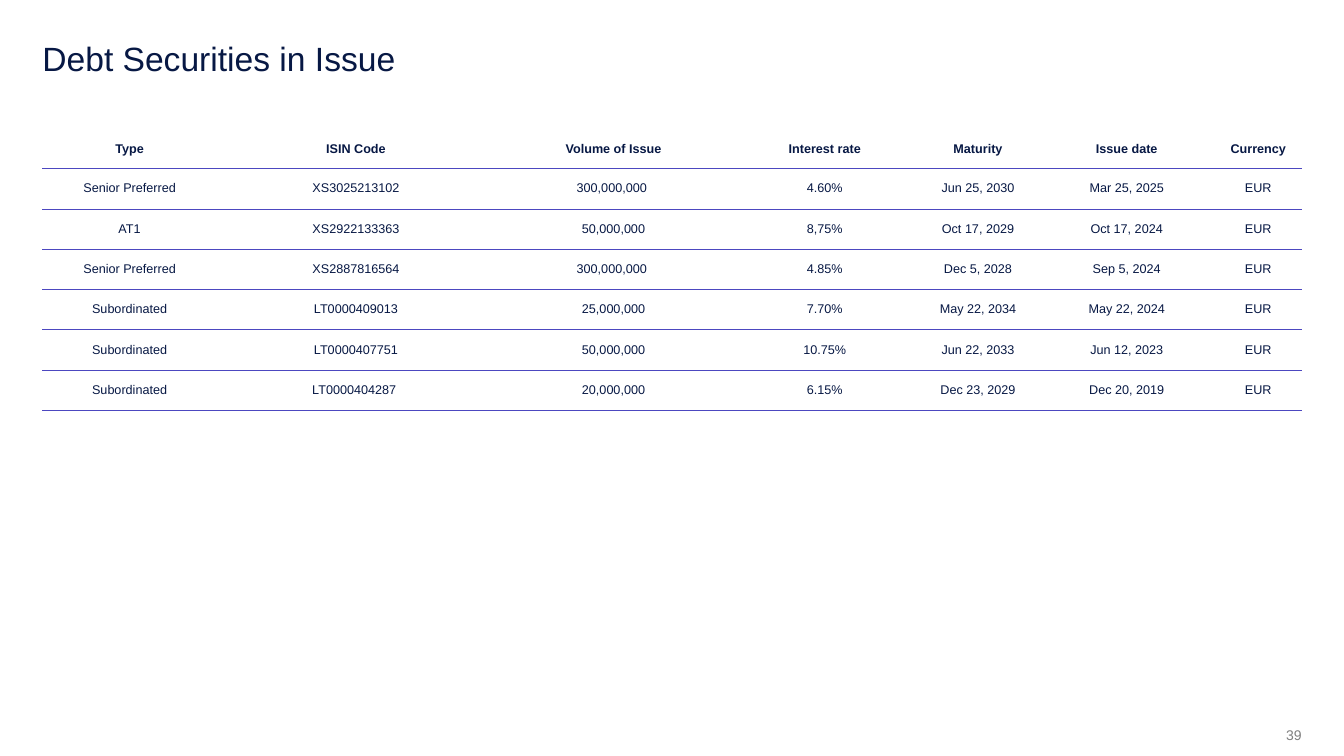
from lxml import etree
from pptx import Presentation
from pptx import util as u
from pptx.dml.color import RGBColor
from pptx.enum import text
from pptx.oxml.ns import qn

TITLE = "Debt Securities in Issue"
PAGE_NUMBER = "39"
HEADERS = ("Type", "ISIN Code", "Volume of Issue", "Interest rate",
           "Maturity", "Issue date", "Currency")
SECURITIES = [
    ("Senior Preferred", "XS3025213102", "300,000,000 ", "4.60%", "Jun 25, 2030", "Mar 25, 2025", "EUR"),
    ("AT1", "XS2922133363", "50,000,000", "8,75%", "Oct 17, 2029", "Oct 17, 2024", "EUR"),
    ("Senior Preferred", "XS2887816564", "300,000,000 ", "4.85%", "Dec 5, 2028", "Sep 5, 2024", "EUR"),
    ("Subordinated", "LT0000409013", " 25,000,000 ", "7.70%", "May 22, 2034", "May 22, 2024", "EUR"),
    ("Subordinated", "LT0000407751", " 50,000,000 ", "10.75%", "Jun 22, 2033", "Jun 12, 2023", "EUR"),
    ("Subordinated", "LT0000404287 ", " 20,000,000 ", "6.15%", "Dec 23, 2029", "Dec 20, 2019", "EUR"),
]
COLUMN_WIDTHS = (1.73, 2.76, 2.35, 1.84, 1.2, 1.75, 0.86)
HEADER_HEIGHT, ROW_HEIGHT = 0.38, 0.4
LEFT, TABLE_TOP = 0.42, 1.29
THICK, THIN = 1, 0.25
COLORS = {"navy": "071844", "rule": "4C47C0", "grey": "808080"}
NO_STYLE = "{2D5ABB26-0587-4C30-8999-92F81FD0307C}"


def format_text(para, size, color, align, bold=False):
    para.alignment = align
    for span in para.runs:
        span.font.name = "Arial"
        span.font.size = u.Pt(size)
        span.font.bold = bold
        span.font.color.rgb = RGBColor.from_string(COLORS[color])


def add_text(page, content, place, size, color, align, anchor):
    box = page.shapes.add_textbox(*map(u.Inches, place))
    frame = box.text_frame
    frame.word_wrap = True
    frame.margin_left = frame.margin_right = frame.margin_top = frame.margin_bottom = 0
    frame.vertical_anchor = anchor
    frame.text = content
    format_text(frame.paragraphs[0], size, color, align)
    return frame.paragraphs[0]


def add_rule(cell, side, points):
    line = etree.SubElement(cell._tc.get_or_add_tcPr(), qn("a:" + side), w=str(u.Pt(points)))
    fill = etree.SubElement(line, qn("a:solidFill"))
    etree.SubElement(fill, qn("a:srgbClr"), val=COLORS["rule"])


def add_securities_table(page):
    rows = [HEADERS] + SECURITIES
    last = len(rows) - 1
    height = HEADER_HEIGHT + ROW_HEIGHT * last
    table = page.shapes.add_table(
        len(rows), len(HEADERS), u.Inches(LEFT), u.Inches(TABLE_TOP),
        u.Inches(sum(COLUMN_WIDTHS)), u.Inches(height)).table
    table.horz_banding = False
    table._tbl.tblPr.find(qn("a:tableStyleId")).text = NO_STYLE
    for column, width in zip(table.columns, COLUMN_WIDTHS):
        column.width = u.Inches(width)
    # Rule below each row: heavy under the header and at the end
    rules = [THICK if r in (0, last) else THIN for r in range(len(rows))]
    for r, values in enumerate(rows):
        table.rows[r].height = u.Inches(ROW_HEIGHT if r else HEADER_HEIGHT)
        for c, value in enumerate(values):
            cell = table.cell(r, c)
            cell.margin_left = cell.margin_right = cell.margin_top = cell.margin_bottom = 0
            cell.vertical_anchor = text.MSO_ANCHOR.MIDDLE
            cell.text = value
            format_text(cell.text_frame.paragraphs[0], 9, "navy", text.PP_ALIGN.CENTER, bold=r == 0)
            if r:
                add_rule(cell, "lnT", rules[r - 1])
            add_rule(cell, "lnB", rules[r])
            cell.fill.background()


def main():
    deck = Presentation()
    deck.slide_width, deck.slide_height = u.Inches(13.33), u.Inches(7.5)
    page = deck.slides.add_slide(deck.slide_layouts[6])

    # Title
    title = add_text(page, TITLE, (LEFT, 0.42, 9.58, 0.36), 24, "navy",
                     text.PP_ALIGN.LEFT, text.MSO_ANCHOR.TOP)
    title.line_spacing = 0.9

    # Table of securities
    add_securities_table(page)

    # Page number
    add_text(page, PAGE_NUMBER, (9.9, 7.08, 3.01, 0.42), 10, "grey",
             text.PP_ALIGN.RIGHT, text.MSO_ANCHOR.MIDDLE)
    deck.save("out.pptx")


if __name__ == "__main__":
    main()
